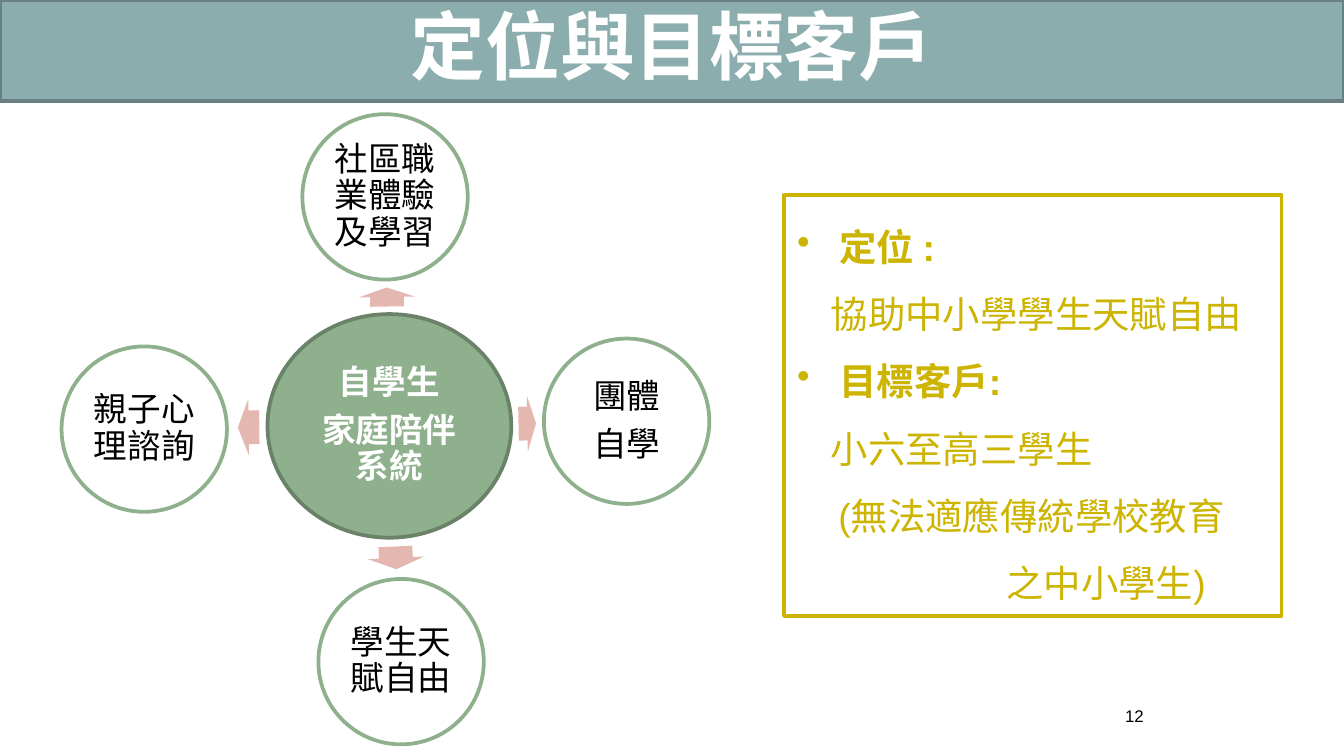
from dataclasses import dataclass

from lxml import etree
from pptx import Presentation
from pptx.dml.color import RGBColor
from pptx.enum.shapes import MSO_SHAPE
from pptx.enum.text import MSO_ANCHOR, MSO_AUTO_SIZE, PP_ALIGN
from pptx.oxml.ns import qn
from pptx.util import Pt

OVAL, RECT, ARROW = MSO_SHAPE.OVAL, MSO_SHAPE.RECTANGLE, MSO_SHAPE.RIGHT_ARROW
MID, TOP = MSO_ANCHOR.MIDDLE, MSO_ANCHOR.TOP
LEFT, CENTER = PP_ALIGN.LEFT, PP_ALIGN.CENTER
GROW = MSO_AUTO_SIZE.SHAPE_TO_FIT_TEXT


@dataclass(frozen=True)
class Theme:
    font: str = "Arial"
    white: str = "FFFFFF"
    black: str = "000000"
    green: str = "8FB08C"
    moss: str = "6A8268"
    pink: str = "E5B7B1"
    teal: str = "8CADAE"
    slate: str = "688081"
    gold: str = "CCB400"
    title: int = 40
    body: int = 20
    node: int = 18
    small: int = 9


T = Theme()
RING = 88.6   # diameter of an outer circle
SPAN = 30.2   # breadth of an arrow

# Each spoke: circle place, lines, arrow place, arrow length, turn
SPOKES = [
    ((162, 61.2), ["社區職業體驗及學習"], (202.2, 144), 10.2, 269.1),
    ((291.4, 181.4), ["團體", "自學"], (277.8, 211.8), 9.4, 358.9),
    ((170.6, 310.2), ["學生天賦自由"], (206, 283.8), 12.2, 87.3),
    ((33, 185.6), ["親子心理諮詢"], (127.4, 213.8), 11.5, 179.2),
]

# Each line of the panel: text, left indent, is it a bulleted head
PANEL = [
    ("定位 :", 22.5, True),
    ("協助中小學學生天賦自由", 18, False),
    ("目標客戶:", 22.5, True),
    ("小六至高三學生", 18, False),
    ("(無法適應傳統學校教育", 22, False),
    ("之中小學生)", 112, False),
]


def apply(item, vals):
    for name, val in vals.items():
        setattr(item, name, val)


def add_form(slide, kind, box, fill=None, line=None):
    form = slide.shapes.add_shape(kind, *map(Pt, box))
    form.shadow.inherit = False
    if fill:
        form.fill.solid()
        form.fill.fore_color.rgb = RGBColor.from_string(fill)
    else:
        form.fill.background()
    if line:
        form.line.color.rgb = RGBColor.from_string(line)
        form.line.width = Pt(2)
    else:
        form.line.fill.background()
    return form


def set_frame(form, pad, anchor=MID, wrap=True):
    frame = form.text_frame
    sides = ("left", "top", "right", "bottom")
    apply(frame, {f"margin_{side}": Pt(pad) for side in sides})
    apply(frame, {"vertical_anchor": anchor, "word_wrap": wrap})
    return frame


def add_line(frame, first, text, size, color, bold=False, **para):
    row = frame.paragraphs[0] if first else frame.add_paragraph()
    apply(row, {"alignment": CENTER, **para})
    run = row.add_run()
    run.text = text
    apply(run.font, {"name": T.font, "size": Pt(size), "bold": bold})
    run.font.color.rgb = RGBColor.from_string(color)
    return row


def indent(row, left, bullet):
    props = row._p.get_or_add_pPr()
    props.set("marL", str(Pt(left)))
    props.set("indent", str(-Pt(left) if bullet else 0))
    if bullet:
        etree.SubElement(props, qn("a:buChar")).set("char", "•")


def add_node(slide, box, lines, fill, line, color, bold=False):
    frame = set_frame(add_form(slide, OVAL, box, fill, line), 2.2)
    for i, text in enumerate(lines):
        add_line(frame, i == 0, text, T.node, color, bold,
                 line_spacing=0.9, space_after=Pt(6.3))


def add_arrow(slide, spot, length, turn):
    arrow = add_form(slide, ARROW, (*spot, length, SPAN), T.pink)
    arrow.adjustments[0], arrow.adjustments[1] = 0.6, 0.5
    arrow.rotation = turn


def add_panel(slide, box):
    form = add_form(slide, RECT, box, line=T.gold)
    frame = form.text_frame
    apply(frame, {"vertical_anchor": TOP, "word_wrap": True,
                  "auto_size": GROW})
    for i, (text, left, head) in enumerate(PANEL):
        row = add_line(frame, i == 0, text, T.body, T.gold, head,
                       alignment=LEFT, line_spacing=1.5)
        indent(row, left, head)


def main():
    deck = Presentation()
    apply(deck, {"slide_width": Pt(720), "slide_height": Pt(405)})
    slide = deck.slides.add_slide(deck.slide_layouts[6])

    # Hub and spokes
    add_node(slide, (143.3, 168.3, 130.6, 119.8), ["自學生", "家庭陪伴系統"],
             T.green, T.moss, T.white, True)
    for spot, lines, tip, length, turn in SPOKES:
        add_arrow(slide, tip, length, turn)
        add_node(slide, (*spot, RING, RING), lines, T.white, T.green, T.black)

    # Page number
    page = slide.shapes.add_textbox(*map(Pt, (601.2, 375.2, 13, 16.6)))
    add_line(set_frame(page, 0, wrap=False), True, "12", T.small, T.black)

    # Title band
    band = add_form(slide, RECT, (0, 0, 720, 54), T.teal, T.slate)
    add_line(set_frame(band, 3.6), True, "定位與目標客戶", T.title, T.white,
             True, line_spacing=0.9)

    # Position and clients
    add_panel(slide, (420, 104.6, 266.6, 225.4))

    deck.save("out.pptx")


if __name__ == "__main__":
    main()
